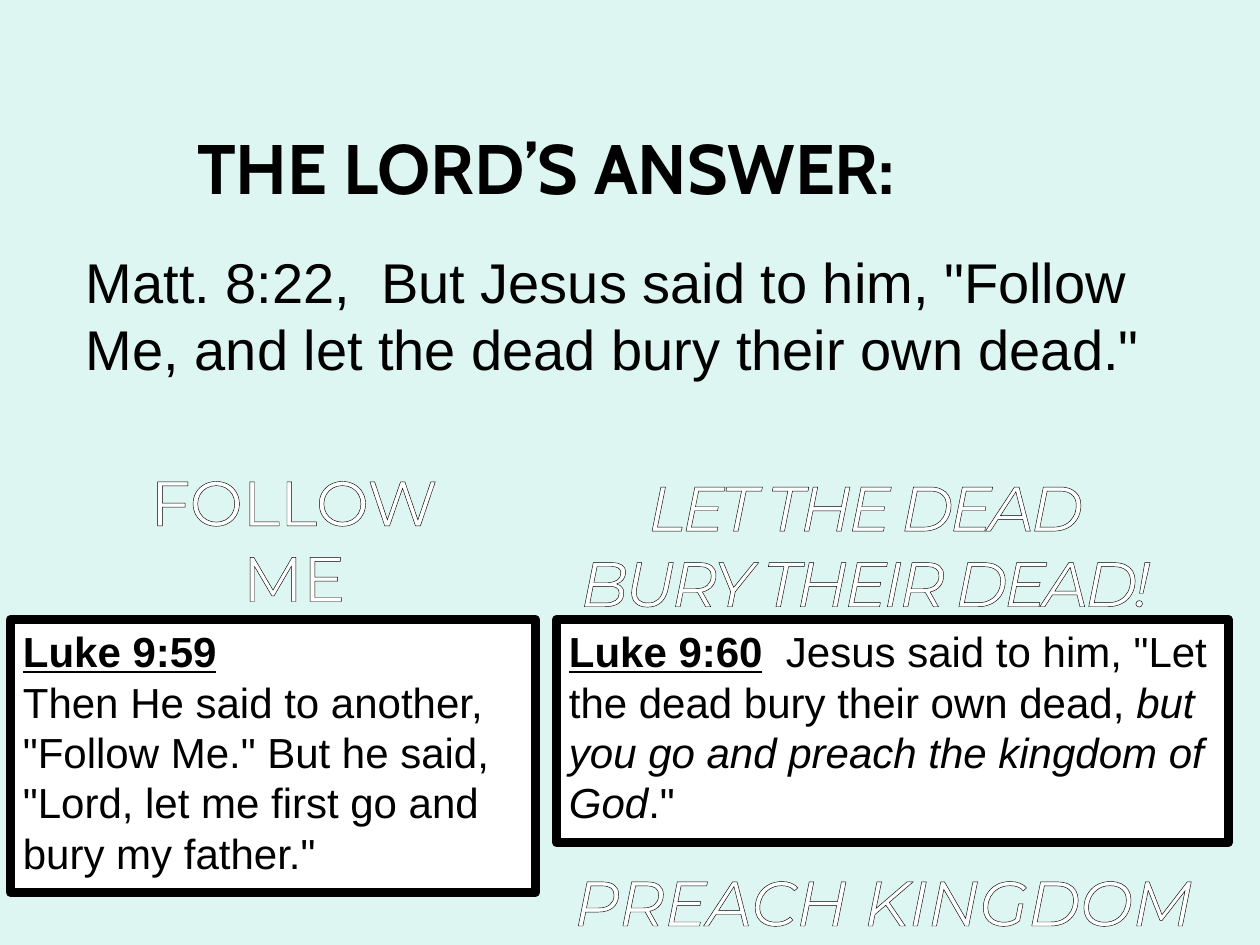
from lxml.etree import SubElement
from pptx import Presentation
from pptx.dml.color import RGBColor
from pptx.enum.shapes import MSO_SHAPE as Shape
from pptx.enum.text import MSO_ANCHOR as Anchor, MSO_AUTO_SIZE as AutoSize, PP_ALIGN as Align
from pptx.oxml import parse_xml
from pptx.oxml.ns import nsdecls
from pptx.util import Pt

COLORS = {"mint": "DEF6F1", "black": "000000", "white": "FFFFFF"}


def color(name):
    return RGBColor.from_string(COLORS[name])


def write(para, text, font="Arial", size=24, fill="black", bold=False,
          italic=False, underline=False, spacing=None, outline=None):
    span = para.add_run()
    span.text = text
    span.font.name = font
    span.font.size = Pt(size)
    span.font.bold = bold
    span.font.italic = italic
    span.font.underline = underline
    span.font.color.rgb = color(fill)
    properties = span.font._element
    if spacing is not None:
        properties.set("spc", str(round(spacing * 100)))
    if outline:
        properties.insert(0, parse_xml(
            f'<a:ln {nsdecls("a")} w="{Pt(outline)}"><a:solidFill>'
            f'<a:srgbClr val="{COLORS["black"]}"/></a:solidFill></a:ln>'))


deck = Presentation()
deck.slide_width, deck.slide_height = Pt(720), Pt(540)
page = deck.slides.add_slide(deck.slide_layouts[5])
page.background.fill.solid()
page.background.fill.fore_color.rgb = color("mint")

title = page.shapes.title
title.left, title.top, title.width, title.height = Pt(6), Pt(50.4), Pt(612), Pt(90)
title.text_frame.vertical_anchor = Anchor.MIDDLE
title.text_frame.paragraphs[0].alignment = Align.CENTER
write(title.text_frame.paragraphs[0], "THE LORD’S ANSWER:", font="Cabin", size=40, bold=True)

verse = page.shapes.add_textbox(Pt(42), Pt(138), Pt(624), Pt(84))
verse.text_frame.word_wrap = True
verse.text_frame.auto_size = AutoSize.SHAPE_TO_FIT_TEXT
write(verse.text_frame.paragraphs[0],
      'Matt. 8:22,  But Jesus said to him, "Follow Me, and let the dead bury their own dead."',
      size=32)

headings = [
    (48, 261, 240, 75, ["FOLLOW ME"], {}),
    (324, 264, 341, 72, ["LET THE DEAD", "BURY THEIR DEAD!"], {"italic": True, "spacing": -1.8}),
    (318, 489.6, 374, 38, ["PREACH KINGDOM"], {"italic": True}),
]
for left, top, width, height, lines, style in headings:
    box = page.shapes.add_textbox(Pt(left), Pt(top), Pt(width), Pt(height))
    frame = box.text_frame
    frame.word_wrap = False
    for index, line in enumerate(lines):
        para = frame.add_paragraph() if index else frame.paragraphs[0]
        para.alignment = Align.CENTER
        write(para, line, font="Montserrat", size=36, fill="white", outline=0.75, **style)

passages = [
    (6, 300, 156, "Luke 9:59", True, [
        ('Then He said to another, "Follow Me." But he said, '
         '"Lord, let me first go and bury my father."', {})]),
    (318, 384, 127.5, "Luke 9:60", False, [
        ('  Jesus said to him, "Let the dead bury their own dead, ', {}),
        ("but you go and preach the kingdom of God", {"italic": True}),
        ('."', {})]),
]
for left, width, height, reference, break_after, spans in passages:
    box = page.shapes.add_shape(Shape.RECTANGLE, Pt(left), Pt(354), Pt(width), Pt(height))
    box.shadow.inherit = False
    box.fill.solid()
    box.fill.fore_color.rgb = color("white")
    box.line.color.rgb = color("black")
    box.line.width = Pt(5)
    frame = box.text_frame
    frame.word_wrap = True
    frame.auto_size = AutoSize.SHAPE_TO_FIT_TEXT
    frame.vertical_anchor = Anchor.TOP
    para = frame.paragraphs[0]
    para.alignment = Align.LEFT
    write(para, reference, bold=True, underline=True)
    if break_after:
        para.add_line_break()
        SubElement(para._p[-1], para._p.tag[:-1] + "rPr", sz="2400")
    for text, style in spans:
        write(para, text, **style)

deck.save("out.pptx")
